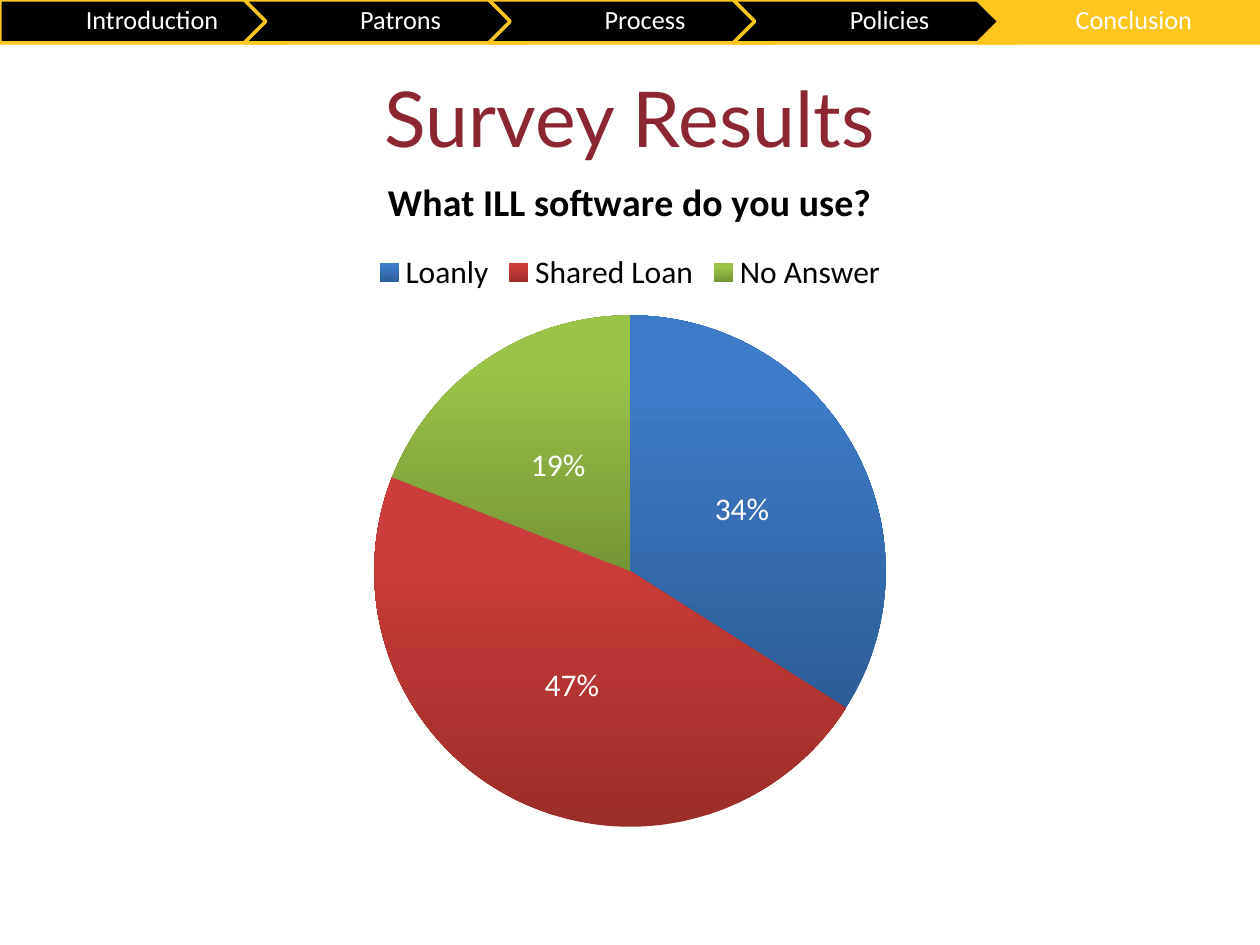
import pptx
import pptx.chart.data
import pptx.dml.color
import pptx.enum.chart
import pptx.enum.shapes
import pptx.enum.text
import pptx.util
from dataclasses import dataclass

Pt = pptx.util.Pt
SHAPE = pptx.enum.shapes.MSO_SHAPE


@dataclass(frozen=True)
class Theme:
    black: str = "000000"
    white: str = "FFFFFF"
    gold: str = "FFC61E"
    maroon: str = "8C2633"
    # Dark and light end of each slice
    slices: tuple = (("2C5D98", "3C7BC7"), ("9B2D2A", "CB3D3A"), ("769535", "9BC348"))
    title_font: str = "Lato"
    body_font: str = "Calibri"
    title_size: float = 44
    chart_title_size: float = 21.6
    chart_size: float = 18
    step_size: float = 15


THEME = Theme()


def rgb(value):
    return pptx.dml.color.RGBColor.from_string(value)


def apply(target, values):
    for name, value in values.items():
        setattr(target, name, value)


def style_font(font, name, size, color, bold=False):
    apply(font, {"name": name, "size": Pt(size), "bold": bold})
    font.color.rgb = rgb(color)


def write_text(shape, text, font_values, margins, spacing=1.0):
    frame = shape.text_frame
    sides = ("margin_left", "margin_top", "margin_right", "margin_bottom")
    apply(frame, dict(zip(sides, map(Pt, margins))))
    apply(frame, {"word_wrap": True,
                  "vertical_anchor": pptx.enum.text.MSO_ANCHOR.MIDDLE})
    paragraph = frame.paragraphs[0]
    apply(paragraph, {"text": text, "line_spacing": spacing,
                      "alignment": pptx.enum.text.PP_ALIGN.CENTER})
    style_font(paragraph.runs[0].font, *font_values)


def add_title(slide, text):
    shape = slide.shapes.add_textbox(Pt(36), Pt(21.6), Pt(648), Pt(90))
    write_text(shape, text, (THEME.title_font, THEME.title_size, THEME.maroon),
               (7.2, 3.6, 7.2, 3.6))


def add_pie(slide, title, results):
    data = pptx.chart.data.CategoryChartData()
    data.categories = list(results)
    data.add_series("Series 1", list(results.values()))
    chart = slide.shapes.add_chart(
        pptx.enum.chart.XL_CHART_TYPE.PIE,
        Pt(0), Pt(84.24), Pt(720), Pt(398.16), data).chart
    style_font(chart.font, THEME.body_font, THEME.chart_size, THEME.black)

    # Title and legend
    chart.has_title = True
    chart.chart_title.include_in_layout = False
    frame = chart.chart_title.text_frame
    frame.text = title
    style_font(frame.paragraphs[0].runs[0].font, THEME.body_font,
               THEME.chart_title_size, THEME.black, True)
    chart.has_legend = True
    apply(chart.legend, {"position": pptx.enum.chart.XL_LEGEND_POSITION.TOP,
                         "include_in_layout": False})

    # Slices, dark at the bottom and light at the top
    plot = chart.plots[0]
    plot.vary_by_categories = True
    for index, (dark, light) in enumerate(THEME.slices):
        fill = plot.series[0].points[index].format.fill
        fill.gradient()
        fill.gradient_angle = 90
        for stop, color, position in zip(fill.gradient_stops, (dark, light), (0, 0.8)):
            stop.color.rgb = rgb(color)
            stop.position = position

    # Percentages
    plot.has_data_labels = True
    labels = plot.data_labels
    apply(labels, {"show_percentage": True, "show_value": False,
                   "number_format": "0%", "number_format_is_linked": False,
                   "position": pptx.enum.chart.XL_LABEL_POSITION.CENTER})
    style_font(labels.font, THEME.body_font, THEME.chart_size, THEME.white)


def add_step(group, index, text, current):
    kind, left_margin = (SHAPE.CHEVRON, 5) if index else (SHAPE.PENTAGON, 6.5)
    shape = group.shapes.add_shape(kind, Pt(139.68 * index), Pt(0), Pt(175), Pt(24.5))
    shape.shadow.inherit = False
    shape.fill.solid()
    shape.fill.fore_color.rgb = rgb(THEME.gold if current else THEME.black)
    shape.line.color.rgb = rgb(THEME.gold)
    shape.line.width = Pt(2)
    write_text(shape, text, (THEME.body_font, THEME.step_size, THEME.white),
               (left_margin, 3, 1.5, 3), 0.9)


def add_progress(slide, steps, current):
    group = slide.shapes.add_group_shape()
    for index, text in enumerate(steps):
        add_step(group, index, text, text == current)


def main():
    presentation = pptx.Presentation()
    apply(presentation, {"slide_width": Pt(720), "slide_height": Pt(540)})
    slide = presentation.slides.add_slide(presentation.slide_layouts[6])
    add_title(slide, "Survey Results")
    add_pie(slide, "What ILL software do you use?",
            {"Loanly": 34, "Shared Loan": 47, "No Answer": 19})
    add_progress(slide, ("Introduction", "Patrons", "Process", "Policies", "Conclusion"),
                 "Conclusion")
    presentation.save("out.pptx")


if __name__ == "__main__":
    main()
